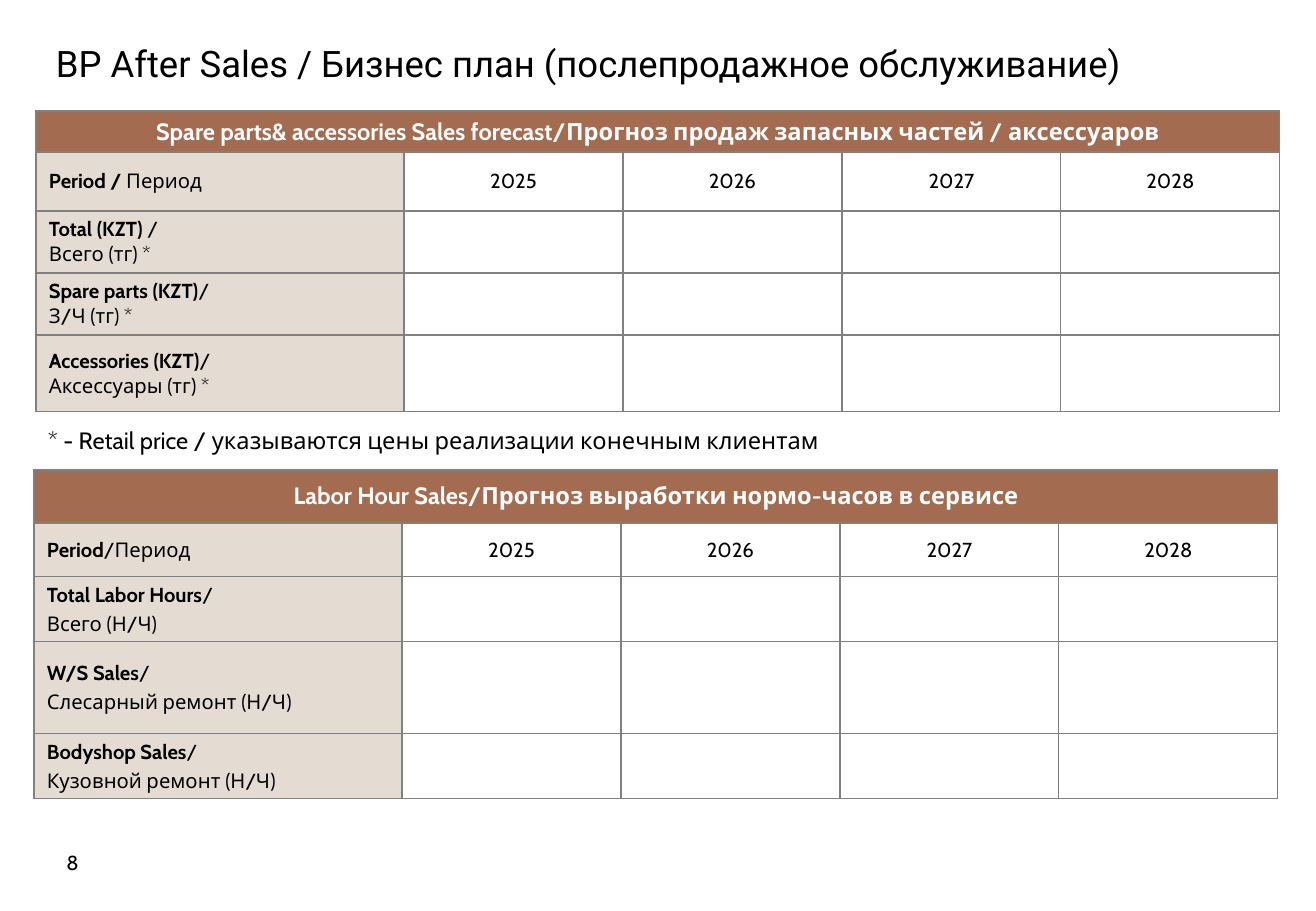
from lxml import etree
from pptx import Presentation
from pptx import util as u
from pptx.dml.color import RGBColor
from pptx.enum import text
from pptx.oxml import ns

EMU_PER_PX = 7526
COLORS = {"ink": "000000", "header": "A36B4F", "label": "E4DCD3",
          "white": "FFFFFF", "border": "808080"}
COLUMNS = [368, 219, 219, 219, 219]
YEARS = ["2025", "2026", "2027", "2028"]
CENTER = text.PP_ALIGN.CENTER
LEFT = text.PP_ALIGN.LEFT


def px(length):
    return u.Emu(length * EMU_PER_PX)


class PlanSlide:
    def __init__(self, presentation, font="Cabin"):
        self.slide = presentation.slides.add_slide(presentation.slide_layouts[6])
        self.font = font

    def add_runs(self, paragraph, runs, size, color="ink", align=LEFT, font=None):
        """Add runs given as (wording, bold) pairs."""
        paragraph.alignment = align
        for wording, bold in runs:
            run = paragraph.add_run()
            run.text = wording
            run.font.name = font or self.font
            run.font.size = u.Pt(size)
            run.font.bold = bold
            run.font.color.rgb = RGBColor.from_string(COLORS[color])

    def textbox(self, box, wording, size, align=LEFT, font=None, wrap=True):
        shape = self.slide.shapes.add_textbox(*map(px, box))
        frame = shape.text_frame
        frame.word_wrap = wrap
        frame.vertical_anchor = text.MSO_ANCHOR.MIDDLE
        self.add_runs(frame.paragraphs[0], [(wording, False)], size,
                      align=align, font=font)

    def style_cell(self, cell, fill):
        cell.vertical_anchor = text.MSO_ANCHOR.MIDDLE
        cell.margin_left = cell.margin_right = px(13)
        cell.margin_top = cell.margin_bottom = px(6)
        properties = cell._tc.get_or_add_tcPr()
        for side in ("a:lnL", "a:lnR", "a:lnT", "a:lnB"):
            line = etree.SubElement(properties, ns.qn(side), w=str(u.Pt(0.75)))
            solid = etree.SubElement(line, ns.qn("a:solidFill"))
            etree.SubElement(solid, ns.qn("a:srgbClr"), val=COLORS["border"])
        cell.fill.solid()
        cell.fill.fore_color.rgb = RGBColor.from_string(COLORS[fill])

    def forecast_table(self, left, top, heights, heading, labels, line_gap=0):
        """Heading row, period row with years, then empty rows to fill in."""
        frame = self.slide.shapes.add_table(
            len(heights), len(COLUMNS), px(left), px(top),
            px(sum(COLUMNS)), px(sum(heights)))
        table = frame.table
        table.first_row = table.horz_banding = False
        for column, width in zip(table.columns, COLUMNS):
            column.width = px(width)
        for row_index, height in enumerate(heights):
            row = table.rows[row_index]
            row.height = px(height)
            for column_index, cell in enumerate(row.cells):
                fill = ("header" if row_index == 0
                        else "label" if column_index == 0 else "white")
                self.style_cell(cell, fill)

        # Heading and years
        table.cell(0, 0).merge(table.cell(0, len(COLUMNS) - 1))
        self.add_runs(table.cell(0, 0).text_frame.paragraphs[0],
                      [(heading, True)], 14, "white", CENTER)
        for column_index, year in enumerate(YEARS, 1):
            self.add_runs(table.cell(1, column_index).text_frame.paragraphs[0],
                          [(year, False)], 12, align=CENTER)

        # Row labels
        for row_index, lines in enumerate(labels, 1):
            label = table.cell(row_index, 0).text_frame
            for line_index, runs in enumerate(lines):
                paragraph = label.paragraphs[0]
                if line_index:
                    paragraph = label.add_paragraph()
                    paragraph.space_before = u.Pt(line_gap)
                self.add_runs(paragraph, runs, 12)


def two_lines(english, russian, slash="/"):
    return [[(english, True), (slash, False)], [(russian, False)]]


def main():
    presentation = Presentation()
    presentation.slide_width = px(1316)
    presentation.slide_height = px(911)
    plan = PlanSlide(presentation)

    # Title
    plan.textbox((44, 35, 1216, 56),
                 "BP After Sales / Бизнес план (послепродажное обслуживание)",
                 21.6, font="Roboto")

    # Page number
    plan.textbox((36, 838, 73, 49), "8", 12, align=CENTER)

    # Parts and accessories
    plan.forecast_table(
        36, 111, [41, 59, 62, 62, 77],
        "Spare parts& accessories Sales forecast/"
        "Прогноз продаж запасных частей / аксессуаров",
        [[[("Period / ", True), ("Период", False)]],
         two_lines("Total (KZT) ", "Всего (тг) *"),
         two_lines("Spare parts (KZT)", "З/Ч (тг) *"),
         two_lines("Accessories (KZT)", "Аксессуары (тг) *")])

    # Price footnote
    plan.textbox((36, 420, 800, 41),
                 "* - Retail price / указываются цены реализации конечным клиентам",
                 14, wrap=False)

    # Labor hours
    plan.forecast_table(
        34, 470, [53, 54, 64, 92, 65],
        "Labor Hour Sales/Прогноз выработки нормо-часов в сервисе",
        [[[("Period", True), ("/Период", False)]],
         two_lines("Total Labor Hours", "Всего (Н/Ч)"),
         two_lines("W/S Sales", "Слесарный ремонт (Н/Ч)"),
         two_lines("Bodyshop Sales", "Кузовной ремонт (Н/Ч)")],
        line_gap=2.4)

    presentation.save("out.pptx")


if __name__ == "__main__":
    main()
